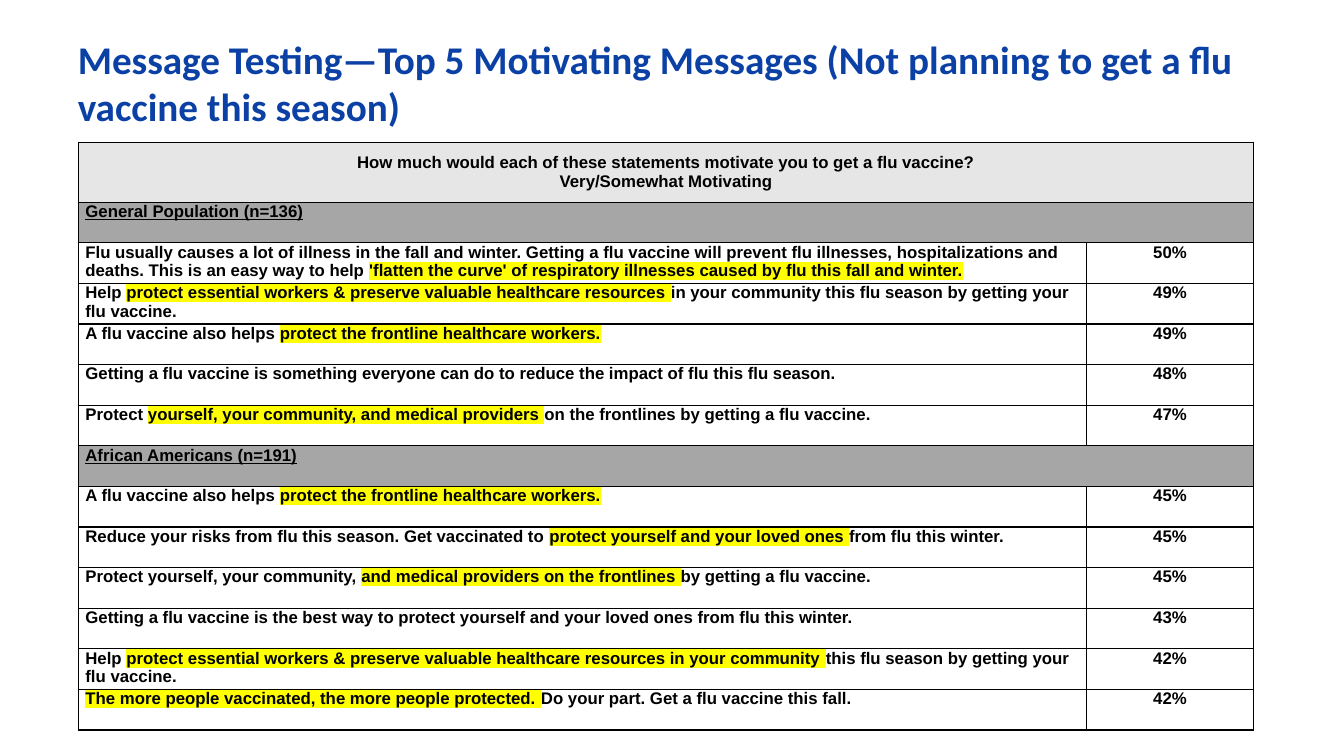
from lxml import etree
from pptx import Presentation
from pptx.dml.color import RGBColor
from pptx.enum.text import MSO_ANCHOR, PP_ALIGN
from pptx.oxml.ns import qn
from pptx.util import Emu, Pt

LEFT, CENTER = PP_ALIGN.LEFT, PP_ALIGN.CENTER
TOP, MIDDLE = MSO_ANCHOR.TOP, MSO_ANCHOR.MIDDLE
EMU_PER_PX = 6350
COLORS = {
    "title": "0B40A5",
    "text": "000000",
    "border": "000000",
    "header": "E7E6E6",
    "group": "A6A6A6",
    "plain": "FFFFFF",
    "highlight": "FFFF00",
}
TITLE = "Message Testing—Top 5 Motivating Messages (Not planning to get a flu vaccine this season)"
QUESTION = [
    "How much would each of these statements motivate you to get a flu vaccine?",
    "Very/Somewhat Motivating",
]
GROUPS = {
    "General Population (n=136)": [
        ("Flu usually causes a lot of illness in the fall and winter. Getting a flu vaccine will "
         "prevent flu illnesses, hospitalizations and deaths. This is an easy way to help "
         "|'flatten the curve' of respiratory illnesses caused by flu this fall and winter.|", "50%"),
        ("Help |protect essential workers & preserve valuable healthcare resources |"
         "in your community this flu season by getting your flu vaccine.", "49%"),
        ("A flu vaccine also helps |protect the frontline healthcare workers.|", "49%"),
        ("Getting a flu vaccine is something everyone can do to reduce the impact of flu "
         "this flu season.", "48%"),
        ("Protect |yourself, your community, and medical providers |"
         "on the frontlines by getting a flu vaccine.", "47%"),
    ],
    "African Americans (n=191)": [
        ("A flu vaccine also helps |protect the frontline healthcare workers.|", "45%"),
        ("Reduce your risks from flu this season. Get vaccinated to "
         "|protect yourself and your loved ones |from flu this winter.", "45%"),
        ("Protect yourself, your community, |and medical providers on the frontlines |"
         "by getting a flu vaccine.", "45%"),
        ("Getting a flu vaccine is the best way to protect yourself and your loved ones "
         "from flu this winter.", "43%"),
        ("Help |protect essential workers & preserve valuable healthcare resources in your "
         "community |this flu season by getting your flu vaccine.", "42%"),
        ("|The more people vaccinated, the more people protected. |"
         "Do your part. Get a flu vaccine this fall.", "42%"),
    ],
}


def px(length):
    return Emu(length * EMU_PER_PX)


class SlideBuilder:
    def __init__(self, deck):
        self.page = deck.slides.add_slide(deck.slide_layouts[6])

    def style(self, paragraph, font, size, color, align=LEFT, underline=False):
        paragraph.alignment = align
        paragraph.font.name = font
        paragraph.font.size = Pt(size)
        paragraph.font.bold = True
        paragraph.font.underline = underline
        paragraph.font.color.rgb = RGBColor.from_string(COLORS[color])

    def title(self, text, left, top, width, height):
        box = self.page.shapes.add_textbox(px(left), px(top), px(width), px(height))
        box.text_frame.word_wrap = True
        paragraph = box.text_frame.paragraphs[0]
        paragraph.text = text
        self.style(paragraph, "Calibri", 28, "title")

    def table(self, left, top, columns, rows):
        frame = self.page.shapes.add_table(
            len(rows), len(columns), px(left), px(top), px(sum(columns)), px(sum(rows)))
        grid = frame.table
        for column, width in zip(grid.columns, columns):
            column.width = px(width)
        for row, height in zip(grid.rows, rows):
            row.height = px(height)
        return grid

    def cell(self, cell, lines, fill="plain", align=LEFT, anchor=TOP, underline=False):
        cell.margin_left = cell.margin_right = px(10)
        cell.margin_top = cell.margin_bottom = 0
        cell.vertical_anchor = anchor
        frame = cell.text_frame
        for index, line in enumerate(lines):
            paragraph = frame.add_paragraph() if index else frame.paragraphs[0]
            self.spans(paragraph, line)
            self.style(paragraph, "Arial", 12, "text", align, underline)
        self.borders(cell)
        cell.fill.solid()
        cell.fill.fore_color.rgb = RGBColor.from_string(COLORS[fill])

    def spans(self, paragraph, line):
        for index, part in enumerate(line.split("|")):
            if part:
                span = paragraph.add_run()
                span.text = part
                if index % 2:
                    properties = span.font._element
                    mark = etree.SubElement(properties, qn("a:highlight"))
                    etree.SubElement(mark, qn("a:srgbClr"), val=COLORS["highlight"])

    def borders(self, cell):
        properties = cell._tc.get_or_add_tcPr()
        for side in ("a:lnL", "a:lnR", "a:lnT", "a:lnB"):
            line = etree.SubElement(properties, qn(side), w=str(Pt(1)))
            fill = etree.SubElement(line, qn("a:solidFill"))
            etree.SubElement(fill, qn("a:srgbClr"), val=COLORS["border"])

    def wide_row(self, grid, row, lines, **look):
        first, last = grid.cell(row, 0), grid.cell(row, 1)
        first.merge(last)
        self.cell(first, lines, **look)
        self.borders(last)


def main():
    deck = Presentation()
    deck.slide_width, deck.slide_height = px(1920), px(1080)
    builder = SlideBuilder(deck)
    body_rows = sum(1 + len(messages) for messages in GROUPS.values())
    grid = builder.table(112, 203, [1440, 239], [86] + [58] * body_rows)
    builder.wide_row(grid, 0, QUESTION, fill="header", align=CENTER, anchor=MIDDLE)
    row = 1
    for group, messages in GROUPS.items():
        builder.wide_row(grid, row, [group], fill="group", underline=True)
        for row, (message, share) in enumerate(messages, row + 1):
            builder.cell(grid.cell(row, 0), [message])
            builder.cell(grid.cell(row, 1), [share], align=CENTER)
        row += 1
    builder.title(TITLE, 97, 43, 1728, 187)
    deck.save("out.pptx")


if __name__ == "__main__":
    main()
